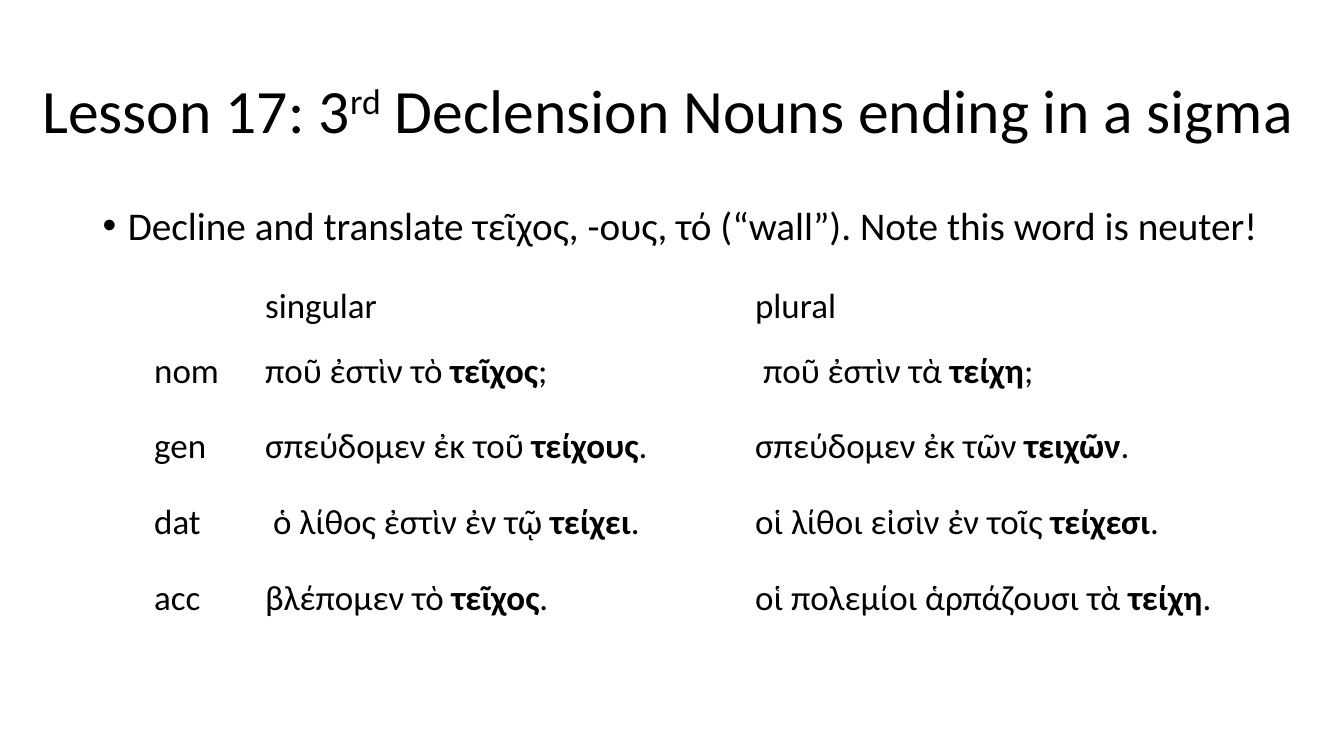
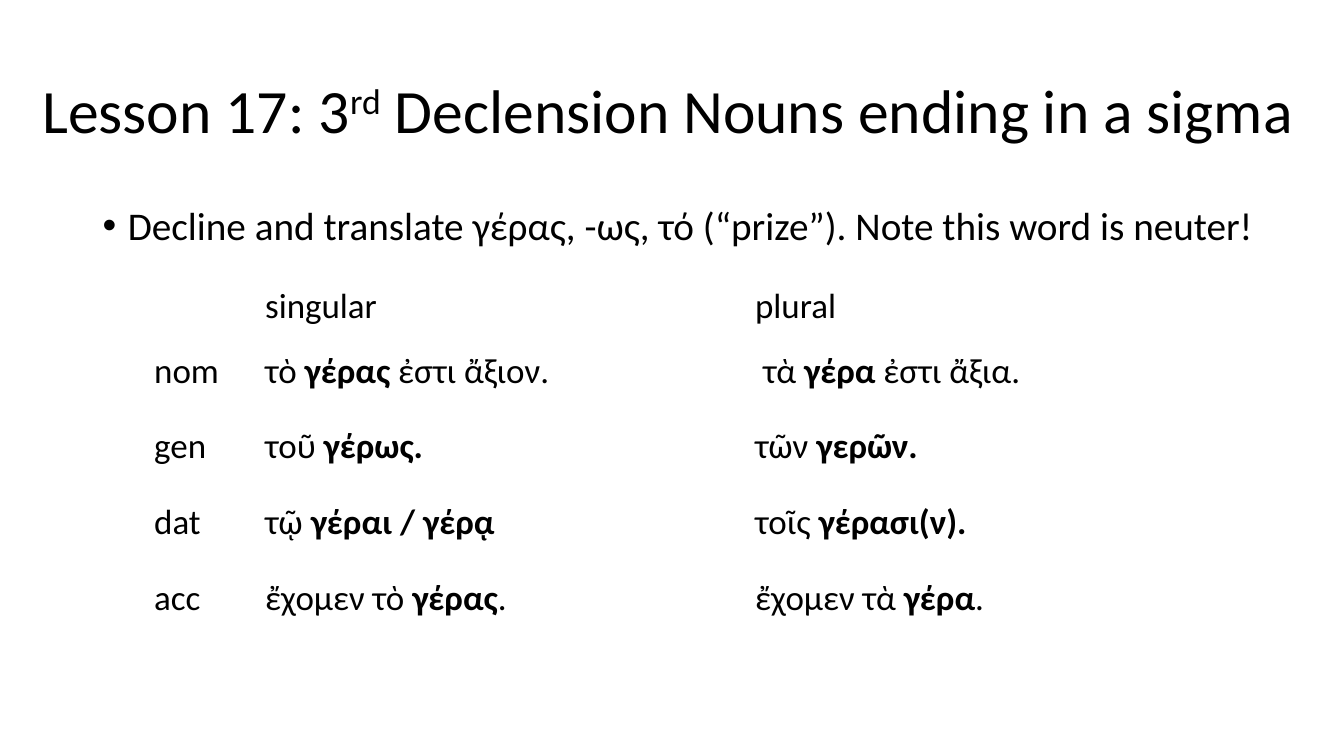
from pptx import Presentation
from pptx.dml.color import RGBColor
from pptx.enum.text import MSO_ANCHOR
from pptx.oxml.xmlchemy import OxmlElement
from pptx.util import Inches, Pt

COLOURS = {"text": "000000", "page": "FFFFFF"}
TITLE = "Lesson 17: 3*rd* Declension Nouns ending in a sigma"
CASES = ["nom", "gen", "dat", "acc"]
LESSONS = [
    ("Decline and translate τεῖχος, -ους, τό (“wall”). Note this word is neuter!",
     ["ποῦ ἐστὶν τὸ *τεῖχος*;", "σπεύδομεν ἐκ τοῦ *τείχους*.",
      " ὁ λίθος ἐστὶν ἐν τῷ *τείχει*.", "βλέπομεν τὸ *τεῖχος*."],
     [" ποῦ ἐστὶν τὰ *τείχη*;", "σπεύδομεν ἐκ τῶν *τειχῶν*.",
      "οἱ λίθοι εἰσὶν ἐν τοῖς *τείχεσι*.", "οἱ πολεμίοι ἁρπάζουσι τὰ *τείχη*."]),
    ("Decline and translate γέρας, -ως, τό (“prize”). Note this word is neuter!",
     ["τὸ *γέρας *ἐστι ἄξιον.", "τοῦ *γέρως.*", "τῷ *γέραι / γέρᾳ*", "ἔχομεν τὸ *γέρας*."],
     [" τὰ *γέρα *ἐστι ἄξια.", "τῶν *γερῶν.*", "τοῖς *γέρασι(ν).*", "ἔχομεν τὰ *γέρα*."]),
]


class LessonDeck:
    """Holds the lesson style and the current page."""

    font = "Calibri"
    title_size, prompt_size, cell_size = Pt(44), Pt(28), Pt(25)
    cell_margin = Inches(0.07)
    column_widths = [1.1, 4.86, 4.99]
    row_heights = [0.64] + [0.75] * 4

    def __init__(self):
        self.deck = Presentation()
        self.deck.slide_width, self.deck.slide_height = Inches(13.33), Inches(7.5)
        self.page = None

    def add_page(self):
        self.page = self.deck.slides.add_slide(self.deck.slide_layouts[6])
        fill = self.page.background.fill
        fill.solid()
        fill.fore_color.rgb = RGBColor.from_string(COLOURS["page"])

    def add_spans(self, para, marked_text, size, spacing):
        para.line_spacing = spacing
        marked_spans = []
        for index, text in enumerate(marked_text.split("*")):
            if not text:
                continue
            span = para.add_run()
            span.text = text
            span.font.name = self.font
            span.font.size = size
            span.font.color.rgb = RGBColor.from_string(COLOURS["text"])
            if index % 2:
                marked_spans.append(span)
        return marked_spans

    def add_box(self, left, top, width, height):
        box = self.page.shapes.add_textbox(
            Inches(left), Inches(top), Inches(width), Inches(height))
        box.text_frame.word_wrap = True
        return box.text_frame

    def add_title(self, text):
        frame = self.add_box(0.32, 0.4, 13.02, 1.45)
        frame.vertical_anchor = MSO_ANCHOR.MIDDLE
        for span in self.add_spans(frame.paragraphs[0], text, self.title_size, 0.9):
            span.font._element.set("baseline", "30000")

    def add_prompt(self, text):
        para = self.add_box(0.92, 2, 11.97, 0.7).paragraphs[0]
        self.add_spans(para, text, self.prompt_size, 0.9)
        para.space_before = Pt(10)
        properties = para._p.get_or_add_pPr()
        properties.set("marL", str(Inches(0.25)))
        properties.set("indent", str(-Inches(0.25)))
        for tag, name, value in (("a:buFont", "typeface", "Arial"), ("a:buChar", "char", "•")):
            element = OxmlElement(tag)
            element.set(name, value)
            properties.append(element)

    def add_declension(self, singular, plural):
        rows = [("", "singular", "plural"), *zip(CASES, singular, plural)]
        table = self.page.shapes.add_table(
            len(rows), len(self.column_widths), Inches(1.46), Inches(2.7),
            Inches(sum(self.column_widths)), Inches(sum(self.row_heights))).table
        table.first_row = table.horz_banding = False
        for column, width in zip(table.columns, self.column_widths):
            column.width = Inches(width)
        for row, height, texts in zip(table.rows, self.row_heights, rows):
            row.height = Inches(height)
            for cell, text in zip(row.cells, texts):
                self.fill_cell(cell, text)

    def fill_cell(self, cell, text):
        cell.fill.background()
        cell.margin_left = cell.margin_right = self.cell_margin
        cell.margin_top = cell.margin_bottom = self.cell_margin
        if text:
            para = cell.text_frame.paragraphs[0]
            para.space_after = Pt(6)
            for span in self.add_spans(para, text, self.cell_size, 1.15):
                span.font.bold = True


def main():
    lesson = LessonDeck()
    for prompt, singular, plural in LESSONS:
        lesson.add_page()
        lesson.add_prompt(prompt)
        lesson.add_declension(singular, plural)
        lesson.add_title(TITLE)
    lesson.deck.save("out.pptx")


if __name__ == "__main__":
    main()
